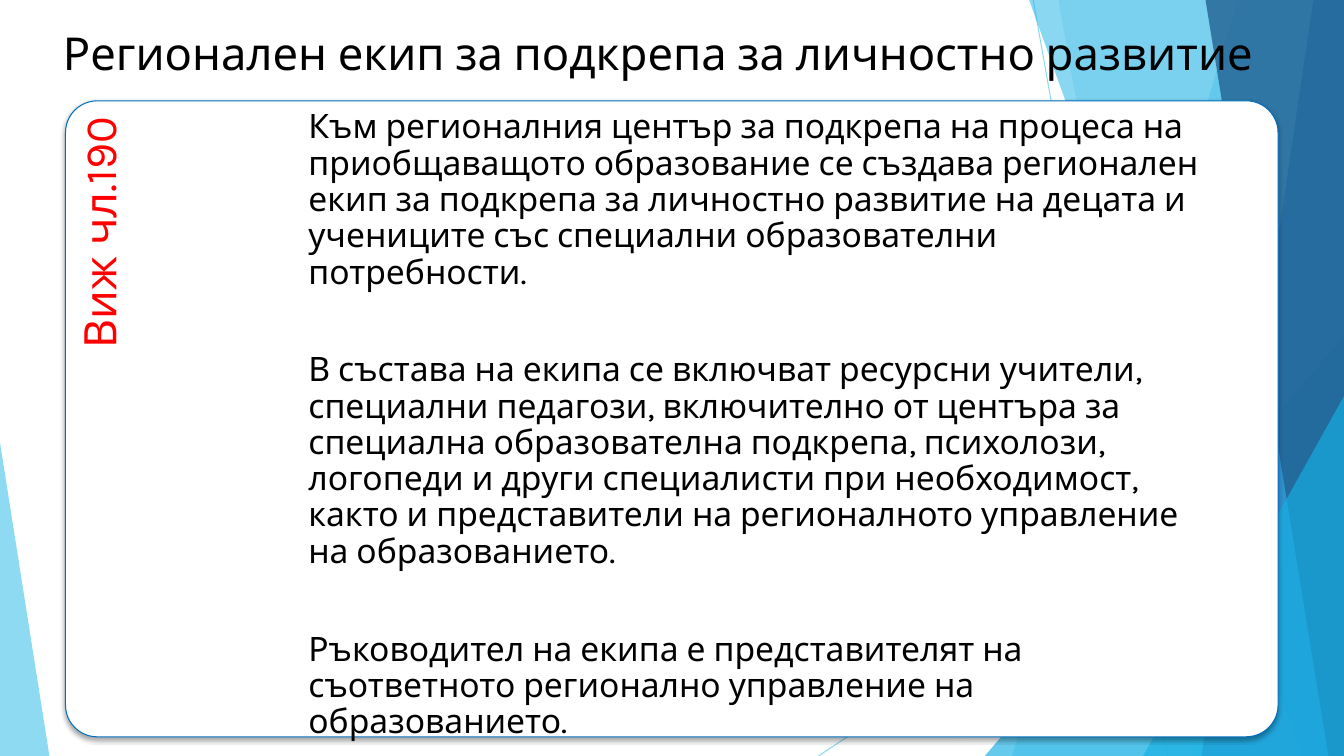
from lxml import etree
from pptx import Presentation
from pptx.dml.color import RGBColor
from pptx.enum.shapes import MSO_CONNECTOR, MSO_SHAPE
from pptx.enum.text import MSO_ANCHOR, PP_ALIGN
from pptx.oxml.ns import qn
from pptx.util import Emu, Inches, Pt

COLUMNS, ROWS = 160, 90
CELL = Inches(1 / 12)
FONT = "Karla"
STRAIGHT = MSO_CONNECTOR.STRAIGHT
TRIANGLE = MSO_SHAPE.ISOSCELES_TRIANGLE
ROUNDED = MSO_SHAPE.ROUNDED_RECTANGLE
TOP, MIDDLE = MSO_ANCHOR.TOP, MSO_ANCHOR.MIDDLE
LEFT, CENTER, RIGHT = PP_ALIGN.LEFT, PP_ALIGN.CENTER, PP_ALIGN.RIGHT

SKY, CYAN, BLUE, NAVY = "5FCBEF", "17B0E4", "2E83C3", "226292"
RAYS = [((123, 0), (139, ROWS)), ((COLUMNS, 48.36), (97.44, ROWS))]
PALE_BANDS = [(147.36, 120.48, SKY, 36), (126, 141.96, SKY, 20)]
DEEP_BANDS = [
    (122.52, 154.92, CYAN, 50),
    (156.36, 143.04, BLUE, 70),
    (143.52, 158.16, NAVY, 80),
]

CARD_LEFT, CARD_TOP, CARD_WIDTH, CARD_HEIGHT = 7.8, 12, 144.36, 75.72
LABEL_WIDTH, LABEL_LENGTH = 28.92, 62.04
BODY_WIDTH = 107.52

TITLE = "Регионален екип за подкрепа за личностно развитие"
LABEL = "Виж чл.190"
BODY = [
    "Към регионалния център за подкрепа на процеса на приобщаващото образование "
    "се създава регионален екип за подкрепа за личностно развитие на децата и "
    "учениците със специални образователни потребности.",
    "В състава на екипа се включват ресурсни учители, специални педагози, "
    "включително от центъра за специална образователна подкрепа, психолози, "
    "логопеди и други специалисти при необходимост, както и представители на "
    "регионалното управление на образованието.",
    "Ръководител на екипа е представителят на съответното регионално управление "
    "на образованието.",
]


def grid(*cells):
    """Convert grid cells to lengths."""
    return [Emu(round(cell * CELL)) for cell in cells]


def paint(color_format, color, opacity=100):
    """Set a colour with its opacity in percent."""
    color_format.rgb = RGBColor.from_string(color)
    if opacity < 100:
        element = color_format._xFill.find(qn("a:srgbClr"))
        etree.SubElement(element, qn("a:alpha"), val=str(opacity * 1000))


def fill_plain(shape, color, opacity=100):
    """Fill a shape without line or shadow."""
    shape.shadow.inherit = False
    shape.fill.solid()
    paint(shape.fill.fore_color, color, opacity)
    shape.line.fill.background()


def add_ray(slide, start, end):
    """Draw a thin translucent line."""
    ray = slide.shapes.add_connector(STRAIGHT, *grid(*start, *end))
    ray.line.width = Pt(0.75)
    ray.line.fill.solid()
    paint(ray.line.fill.fore_color, SKY, 70)
    etree.SubElement(ray._element.spPr, qn("a:effectLst"))


def add_band(slide, top_left, bottom_left, color, opacity):
    """Draw a full-height band reaching the right edge."""
    builder = slide.shapes.build_freeform(*grid(top_left, 0))
    corners = [(COLUMNS, 0), (COLUMNS, ROWS), (bottom_left, ROWS)]
    builder.add_line_segments([grid(*corner) for corner in corners])
    fill_plain(builder.convert_to_shape(), color, opacity)


def add_corner(slide, left, top, right, apex, color, opacity):
    """Draw a triangle standing on the bottom edge."""
    box = grid(left, top, right - left, ROWS - top)
    triangle = slide.shapes.add_shape(TRIANGLE, *box)
    triangle.adjustments[0] = apex
    fill_plain(triangle, color, opacity)


def add_card(slide):
    """Draw the white rounded card with a soft shadow."""
    box = grid(CARD_LEFT, CARD_TOP, CARD_WIDTH, CARD_HEIGHT)
    card = slide.shapes.add_shape(ROUNDED, *box)
    card.adjustments[0] = 0.05
    fill_plain(card, "FFFFFF")
    card.line.fill.solid()
    paint(card.line.fill.fore_color, "0070C0")
    card.line.width = Pt(0.75)
    effects = card._element.spPr.find(qn("a:effectLst"))
    shadow = etree.SubElement(
        effects, qn("a:outerShdw"), blurRad=str(Pt(3)), dist=str(Pt(2)),
        dir="5400000", rotWithShape="0")
    black = etree.SubElement(shadow, qn("a:srgbClr"), val="000000")
    etree.SubElement(black, qn("a:alpha"), val="35000")


def add_text(slide, box, texts, size, color="000000", align=LEFT,
             anchor=TOP, insets=(0, 0, 0, 0), spacing=1.0, gap=0):
    """Add a wrapped text box with one run per paragraph."""
    shape = slide.shapes.add_textbox(*grid(*box))
    frame = shape.text_frame
    frame.word_wrap = True
    frame.vertical_anchor = anchor
    (frame.margin_left, frame.margin_top,
     frame.margin_right, frame.margin_bottom) = [Inches(i) for i in insets]
    for index, text in enumerate(texts):
        paragraph = frame.add_paragraph() if index else frame.paragraphs[0]
        paragraph.alignment = align
        paragraph.line_spacing = spacing
        paragraph.space_before = Pt(gap if index else 0)
        run = paragraph.add_run()
        run.text = text
        run.font.name = FONT
        run.font.size = Pt(size)
        paint(run.font.color, color)
    return shape


def add_background(slide):
    """Draw the faceted background."""
    for start, end in RAYS:
        add_ray(slide, start, end)
    for band in PALE_BANDS:
        add_band(slide, *band)
    add_corner(slide, 117.24, 39.96, COLUMNS, 1, CYAN, 66)
    for band in DEEP_BANDS:
        add_band(slide, *band)
    add_corner(slide, 136.08, 47.16, COLUMNS, 1, CYAN, 66)
    add_corner(slide, 0, 52.68, 5.88, 0, SKY, 70)


def add_label(slide):
    """Add the red label that reads upwards along the card."""
    shift = (LABEL_LENGTH - LABEL_WIDTH) / 2
    box = (CARD_LEFT - shift, CARD_TOP + shift, LABEL_LENGTH, LABEL_WIDTH)
    label = add_text(slide, box, [LABEL], 32, "FF0000", RIGHT,
                     insets=(0, 0.12, 0.16, 0), spacing=0.9)
    label.rotation = 270


def main():
    """Build and save the slide."""
    presentation = Presentation()
    presentation.slide_width, presentation.slide_height = grid(COLUMNS, ROWS)
    slide = presentation.slides.add_slide(presentation.slide_layouts[6])
    add_background(slide)
    add_text(slide, (2.46, 2.16, 151.8, 8.16), [TITLE], 32.4,
             align=CENTER, anchor=MIDDLE)
    add_card(slide)
    add_label(slide)
    body_box = (CARD_LEFT + LABEL_WIDTH, CARD_TOP, BODY_WIDTH, CARD_HEIGHT)
    add_text(slide, body_box, BODY, 24, insets=(0, 0.09, 0, 0),
             spacing=0.9, gap=44)
    presentation.save("out.pptx")


if __name__ == "__main__":
    main()
